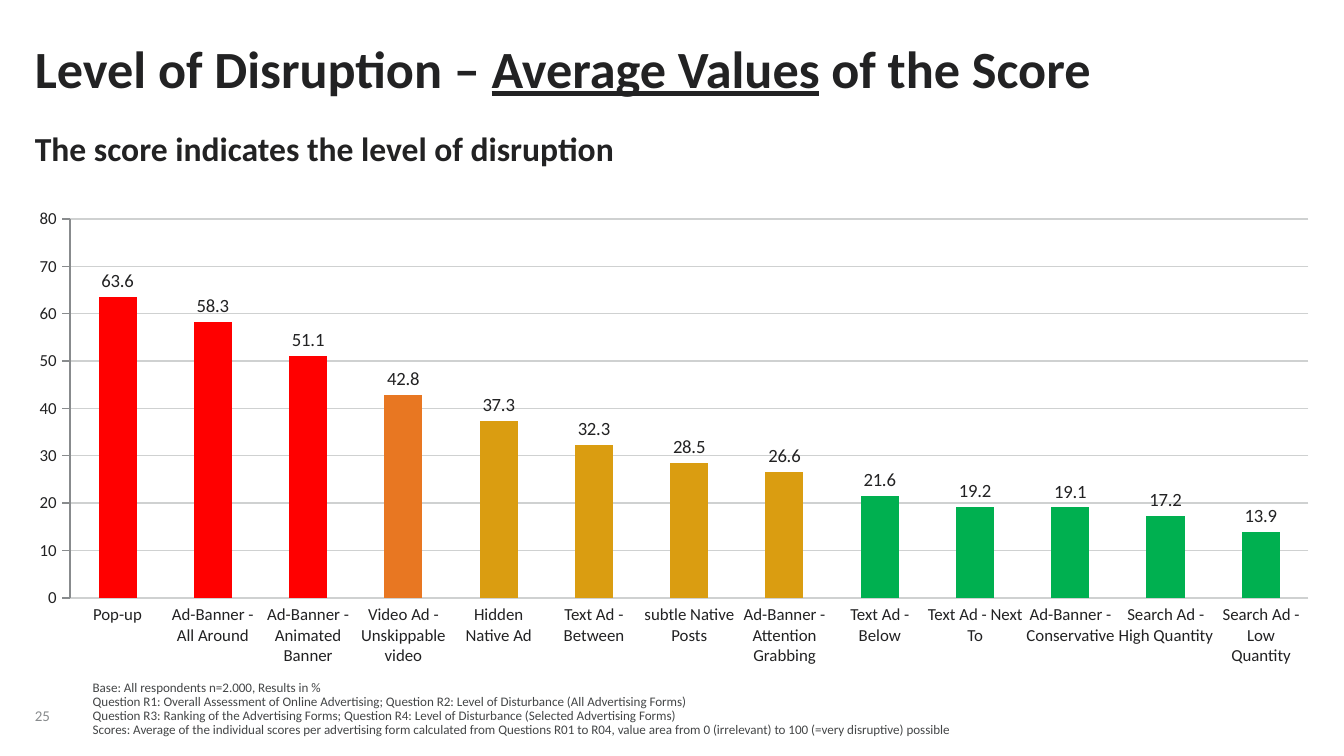
"""Build a slide charting the average disruption score of each advertising form."""
from dataclasses import dataclass

from lxml import etree
from pptx import Presentation
from pptx.chart.data import CategoryChartData
from pptx.dml.color import RGBColor
from pptx.enum.chart import XL_CHART_TYPE, XL_LABEL_POSITION, XL_TICK_LABEL_POSITION, XL_TICK_MARK
from pptx.enum.text import MSO_ANCHOR, PP_ALIGN
from pptx.oxml.ns import qn
from pptx.util import Pt

COLUMN = XL_CHART_TYPE.COLUMN_CLUSTERED
OUTSIDE_END = XL_LABEL_POSITION.OUTSIDE_END
LOW = XL_TICK_LABEL_POSITION.LOW
TICK_OUT = XL_TICK_MARK.OUTSIDE
TOP, BOTTOM = MSO_ANCHOR.TOP, MSO_ANCHOR.BOTTOM
LEFT, CENTER = PP_ALIGN.LEFT, PP_ALIGN.CENTER
FONT = "Calibri"
NO_STYLE = "{2D5ABB26-0587-4C30-8999-92F81FD0307C}"
COLORS = {
    "text": "222223", "note": "444647", "number": "888B8D", "grid": "CFD1D1",
    "series": "1B365D", "severe": "FF0000", "high": "E87722",
    "medium": "DA9D11", "low": "00B050",
}
PLOT = {"x": 0.027, "y": 0.081, "w": 0.954, "h": 0.762}
NOTES = [
    "Base: All respondents n=2.000, Results in %",
    "Question R1: Overall Assessment of Online Advertising; "
    "Question R2: Level of Disturbance (All Advertising Forms)",
    "Question R3: Ranking of the Advertising Forms; "
    "Question R4: Level of Disturbance (Selected Advertising Forms)",
    "Scores: Average of the individual scores per advertising form calculated from "
    "Questions R01 to R04, value area from 0 (irrelevant) to 100 (=very disruptive) possible",
]


@dataclass(frozen=True)
class Box:
    """Position and size in points."""

    left: float
    top: float
    width: float
    height: float

    def emu(self) -> tuple:
        """Return the four lengths for a shape call."""
        return Pt(self.left), Pt(self.top), Pt(self.width), Pt(self.height)


@dataclass(frozen=True)
class AdForm:
    """An advertising form with its score and disruption level."""

    label: str
    score: float
    level: str


AD_FORMS = [
    AdForm("Pop-up", 63.6, "severe"),
    AdForm("Ad-Banner - All Around", 58.3, "severe"),
    AdForm("Ad-Banner - Animated Banner", 51.1, "severe"),
    AdForm("Video Ad - Unskippable video", 42.8, "high"),
    AdForm("Hidden Native Ad", 37.3, "medium"),
    AdForm("Text Ad - Between", 32.3, "medium"),
    AdForm("subtle Native Posts", 28.5, "medium"),
    AdForm("Ad-Banner - Attention Grabbing", 26.6, "medium"),
    AdForm("Text Ad - Below", 21.6, "low"),
    AdForm("Text Ad - Next To", 19.2, "low"),
    AdForm("Ad-Banner - Conservative", 19.1, "low"),
    AdForm("Search Ad - High Quantity", 17.2, "low"),
    AdForm("Search Ad - Low\vQuantity", 13.9, "low"),
]


def color(name: str) -> RGBColor:
    """Look up a named colour."""
    return RGBColor.from_string(COLORS[name])


def style_font(font, size: float, name: str = "text", bold: bool = False) -> None:
    """Set typeface, size, colour and weight."""
    font.name, font.size, font.bold = FONT, Pt(size), bold
    font.color.rgb = color(name)


def style_frame(tf, size: float, name: str = "text", bold: bool = False,
                anchor=TOP, spacing: float = 1.0, wrap: bool = True) -> None:
    """Remove the insets and format every run of a text frame."""
    tf.margin_left = tf.margin_top = tf.margin_right = tf.margin_bottom = 0
    tf.word_wrap, tf.vertical_anchor = wrap, anchor
    for p in tf.paragraphs:
        p.alignment, p.line_spacing = LEFT, spacing
        for r in p.runs:
            style_font(r.font, size, name, bold)


def add_text(s, box: Box, text: str, size: float, **style) -> None:
    """Add a formatted text box."""
    tf = s.shapes.add_textbox(*box.emu()).text_frame
    tf.text = text
    style_frame(tf, size, **style)


def set_title(s, box: Box) -> None:
    """Place the title and underline its middle part."""
    title = s.shapes.title
    title.left, title.top, title.width, title.height = box.emu()
    p = title.text_frame.paragraphs[0]
    for text in ("Level of Disruption – ", "Average Values", " of the Score"):
        p.add_run().text = text
    style_frame(title.text_frame, 28, bold=True)
    p.runs[1].font.underline = True


def set_plot_area(chart) -> None:
    """Fix the inner plot area as fractions of the chart."""
    area = chart._chartSpace.chart.plotArea
    for old in area.findall(qn("c:layout")):
        area.remove(old)
    layout = etree.Element(qn("c:layout"))
    manual = etree.SubElement(layout, qn("c:manualLayout"))
    settings = {"layoutTarget": "inner", "xMode": "edge", "yMode": "edge", **PLOT}
    for tag, value in settings.items():
        etree.SubElement(manual, qn(f"c:{tag}")).set("val", str(value))
    area.insert(0, layout)


def add_score_chart(s, box: Box) -> None:
    """Add the column chart of scores, coloured by level."""
    data = CategoryChartData(number_format="0.0")
    data.categories = [str(i) for i in range(1, len(AD_FORMS) + 1)]
    data.add_series("Series 1", [ad.score for ad in AD_FORMS])
    chart = s.shapes.add_chart(COLUMN, *box.emu(), data).chart
    chart.has_legend = chart.has_title = False
    style_font(chart.font, 10)
    set_plot_area(chart)

    chart.category_axis.visible = False
    axis = chart.value_axis
    axis.minimum_scale, axis.maximum_scale, axis.major_unit = 0, 80, 10
    axis.major_tick_mark, axis.tick_label_position = TICK_OUT, LOW
    axis.tick_labels.number_format = "0"
    axis.tick_labels.number_format_is_linked = False
    style_font(axis.tick_labels.font, 9)
    for line, name in ((axis.format.line, "number"), (axis.major_gridlines.format.line, "grid")):
        line.color.rgb, line.width = color(name), Pt(0.75)

    plot = chart.plots[0]
    plot.gap_width, plot.vary_by_categories = 150, False
    plot.has_data_labels = True
    labels = plot.data_labels
    labels.show_value, labels.position = True, OUTSIDE_END
    labels.number_format, labels.number_format_is_linked = "0.0", False
    style_font(labels.font, 10)
    series = plot.series[0]
    series.format.fill.solid()
    series.format.fill.fore_color.rgb = color("series")
    for i, ad in enumerate(AD_FORMS):
        fill = series.points[i].format.fill
        fill.solid()
        fill.fore_color.rgb = color(ad.level)


def add_label_table(s, box: Box) -> None:
    """Add the row of advertising form names below the columns."""
    table = s.shapes.add_table(1, len(AD_FORMS), *box.emu()).table
    table.first_row = table.horz_banding = False
    table._tbl.tblPr.find(qn("a:tableStyleId")).text = NO_STYLE
    for column, cell, ad in zip(table.columns, table.rows[0].cells, AD_FORMS):
        column.width = Pt(box.width / len(AD_FORMS))
        cell.fill.background()
        cell.margin_left = cell.margin_top = cell.margin_right = cell.margin_bottom = 0
        cell.text_frame.text = ad.label
        p = cell.text_frame.paragraphs[0]
        p.alignment = CENTER
        for r in p.runs:
            style_font(r.font, 9)


def main() -> None:
    """Build and save the slide."""
    prs = Presentation()
    prs.slide_width, prs.slide_height = Pt(720), Pt(405)
    s = prs.slides.add_slide(prs.slide_layouts[5])
    add_text(s, Box(18.7, 369.4, 24.5, 18.7), "25", 8, name="number",
             anchor=BOTTOM, spacing=0.85, wrap=False)
    add_score_chart(s, Box(18.7, 95.8, 695.5, 266.4))
    set_title(s, Box(18.7, 19.4, 602.6, 66.2))
    add_text(s, Box(18.7, 68.4, 665.3, 18), "The score indicates the level of disruption", 18, bold=True)
    add_text(s, Box(49.7, 365, 482.4, 30.2), "\n".join(NOTES), 7, name="note",
             anchor=BOTTOM, spacing=0.9)
    add_label_table(s, Box(37.4, 324, 664, 29.5))
    prs.save("out.pptx")


if __name__ == "__main__":
    main()
